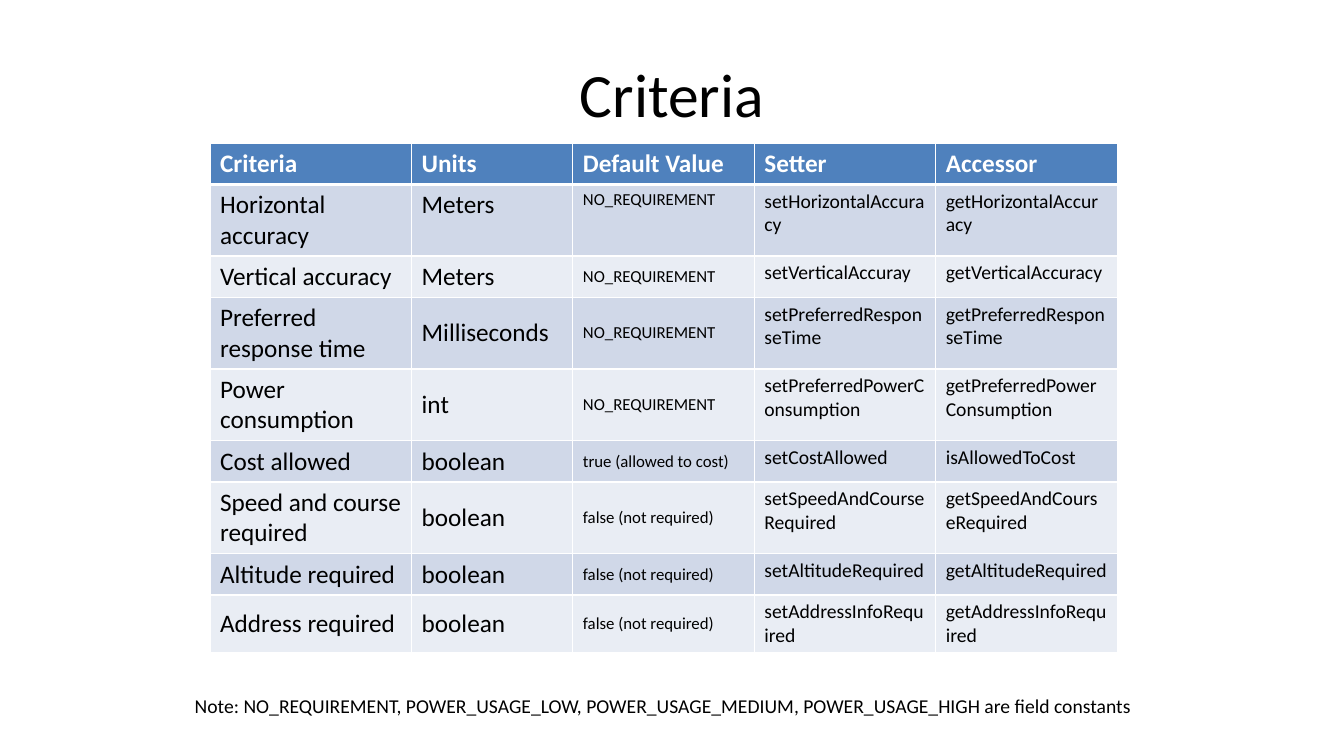
import pptx
import pptx.util
import pptx.dml.color
import pptx.enum.text
import pptx.oxml
import pptx.oxml.ns

ANCHOR = pptx.enum.text.MSO_ANCHOR
COLORS = {"text": "000000", "white": "FFFFFF", "header": "4F81BD",
          "odd": "D0D8E8", "even": "E9EDF4"}
HEADER = ["Criteria", "Units", "Default Value", "Setter", "Accessor"]
CRITERIA = [
    ["Horizontal accuracy", "Meters", "NO_REQUIREMENT",
     "setHorizontalAccuracy", "getHorizontalAccuracy"],
    ["Vertical accuracy", "Meters", "NO_REQUIREMENT",
     "setVerticalAccuray", "getVerticalAccuracy"],
    ["Preferred response time", "Milliseconds", "NO_REQUIREMENT",
     "setPreferredResponseTime", "getPreferredResponseTime"],
    ["Power consumption", "int", "NO_REQUIREMENT",
     "setPreferredPowerConsumption", "getPreferredPowerConsumption"],
    ["Cost allowed", "boolean", "true (allowed to cost)",
     "setCostAllowed", "isAllowedToCost"],
    ["Speed and course required", "boolean", "false (not required)",
     "setSpeedAndCourseRequired", "getSpeedAndCourseRequired"],
    ["Altitude required", "boolean", "false (not required)",
     "setAltitudeRequired", "getAltitudeRequired"],
    ["Address required", "boolean", "false (not required)",
     "setAddressInfoRequired", "getAddressInfoRequired"],
]
COLUMN_WIDTHS = [15, 12, 13.5, 13.5, 13.5]
COLUMN_SIZES = [18, 18, 12, 14, 14]
ROW_HEIGHT = 5.47


class SlideBuilder:
    font = "Calibri"

    def __init__(self, prs):
        self.prs = prs
        self.s = prs.slides.add_slide(prs.slide_layouts[5])

    def x(self, percent):
        return round(self.prs.slide_width * percent / 100)

    def y(self, percent):
        return round(self.prs.slide_height * percent / 100)

    def box(self, left, top, width, height):
        return self.x(left), self.y(top), self.x(width), self.y(height)

    def color(self, name):
        return pptx.dml.color.RGBColor.from_string(COLORS[name])

    def set_text(self, tf, text, size, color="text", bold=False):
        tf.text = text
        for r in tf.paragraphs[0].runs:
            r.font.name = self.font
            r.font.size = pptx.util.Pt(size)
            r.font.bold = bold
            r.font.color.rgb = self.color(color)

    def title(self, text, size, *place):
        sp = self.s.shapes.title
        sp.left, sp.top, sp.width, sp.height = self.box(*place)
        tf = sp.text_frame
        self.set_text(tf, text, size)
        tf.vertical_anchor = ANCHOR.MIDDLE
        tf.paragraphs[0].alignment = pptx.enum.text.PP_ALIGN.CENTER

    def note(self, text, size, *place):
        tf = self.s.shapes.add_textbox(*self.box(*place)).text_frame
        tf.word_wrap = False
        tf.auto_size = pptx.enum.text.MSO_AUTO_SIZE.SHAPE_TO_FIT_TEXT
        self.set_text(tf, text, size)

    def borders(self, cell, top, bottom):
        tcPr = cell._tc.get_or_add_tcPr()
        for side, points in zip("LRTB", (1, 1, top, bottom)):
            tcPr.append(pptx.oxml.parse_xml(
                f'<a:ln{side} {pptx.oxml.ns.nsdecls("a")} w="{pptx.util.Pt(points)}">'
                f'<a:solidFill><a:srgbClr val="{COLORS["white"]}"/></a:solidFill>'
                f'</a:ln{side}>'))

    def cell(self, cell, row, column, text):
        header = row == 0
        fill = "header" if header else "odd" if row % 2 else "even"
        self.borders(cell, 3 if row == 1 else 1, 3 if header else 1)
        cell.fill.solid()
        cell.fill.fore_color.rgb = self.color(fill)
        size = 18 if header else COLUMN_SIZES[column]
        self.set_text(cell.text_frame, text, size, "white" if header else "text", header)
        centred = row > 1 and column < 3
        cell.vertical_anchor = ANCHOR.MIDDLE if centred else ANCHOR.TOP

    def table(self, rows, left, top):
        place = self.box(left, top, sum(COLUMN_WIDTHS), ROW_HEIGHT * len(rows))
        table = self.s.shapes.add_table(len(rows), len(COLUMN_WIDTHS), *place).table
        for column, width in zip(table.columns, COLUMN_WIDTHS):
            column.width = self.x(width)
        for i, texts in enumerate(rows):
            table.rows[i].height = self.y(ROW_HEIGHT)
            for j, text in enumerate(texts):
                self.cell(table.cell(i, j), i, j, text)


def main():
    prs = pptx.Presentation()
    prs.slide_width = pptx.util.Inches(13.33)
    prs.slide_height = pptx.util.Inches(7.5)
    slide = SlideBuilder(prs)
    slide.title("Criteria", 44, 5, 4, 90, 16.67)
    slide.table([HEADER] + CRITERIA, 15.63, 18.93)
    slide.note("Note: NO_REQUIREMENT, POWER_USAGE_LOW, POWER_USAGE_MEDIUM, "
               "POWER_USAGE_HIGH are field constants", 14, 13.75, 91.07, 71.5, 4.53)
    prs.save("out.pptx")


if __name__ == "__main__":
    main()
